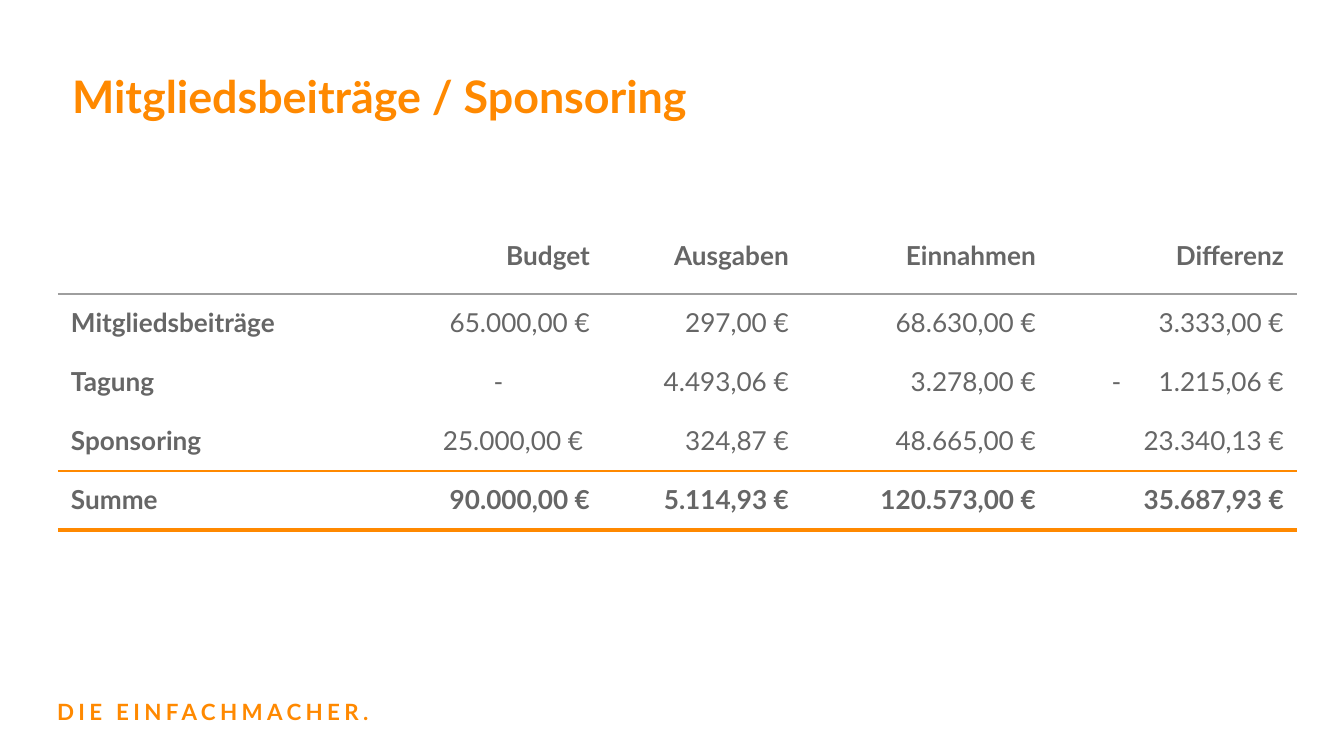
"""Build the slide on membership fees and sponsoring."""
from lxml.etree import SubElement
from pptx import Presentation
from pptx.dml.color import RGBColor
from pptx.enum.text import MSO_ANCHOR as Anchor, PP_ALIGN as Align
from pptx.oxml.ns import qn
from pptx.util import Emu, Pt

COLORS = {"orange": "FF8900", "text": "666666", "rule": "9E9E9E"}
FONT = "Lato"
SLIDE = (1344, 756)
PADDING = 13

TITLE = ("Mitgliedsbeiträge / Sponsoring", (59, 48, 1236, 86))
CLAIM = ("DIE EINFACHMACHER.", (44, 685, 417, 55))

ROWS = [
    ("", "Budget", "Ausgaben", "Einnahmen", "Differenz"),
    ("Mitgliedsbeiträge", "65.000,00 €", "297,00 €", "68.630,00 €", "3.333,00 €"),
    ("Tagung", "-", "4.493,06 €", "3.278,00 €", "1.215,06 €"),
    ("Sponsoring", "25.000,00 € ", "324,87 €", "48.665,00 €", "23.340,13 €"),
    ("Summe", "90.000,00 €", "5.114,93 €", "120.573,00 €", "35.687,93 €"),
]
TABLE_AT = (58, 227)
COLUMN_WIDTHS = [336, 209, 199, 247, 248]
ROW_HEIGHTS = [67, 59, 59, 59, 59]
RULES = {1: ("rule", 0.75), 4: ("orange", 0.75), 5: ("orange", 2.25)}
CENTERED_CELL = (2, 1)
DASHED_CELL = (2, 4)


def px(length):
    return Emu(round(length * 914400 / 134.4))


def write(frame, text, size=14, color="text", bold=False, align=Align.LEFT,
          line_spacing=None, tracking=None, dash=False):
    para = frame.paragraphs[0]
    if dash:
        props = para._p.get_or_add_pPr()
        props.set("marL", str(px(67)))
        props.set("indent", str(px(-47)))
        tint = SubElement(props, qn("a:buClr"))
        SubElement(tint, qn("a:srgbClr"), val=COLORS[color])
        SubElement(props, qn("a:buFont"), typeface=FONT)
        SubElement(props, qn("a:buChar"), char="-")
    para.alignment = align
    if line_spacing:
        para.line_spacing = line_spacing
    span = para.add_run()
    span.text = text
    span.font.name = FONT
    span.font.size = Pt(size)
    span.font.bold = bold
    span.font.color.rgb = RGBColor.from_string(COLORS[color])
    if tracking:
        span.font._element.set("spc", str(round(tracking * 100)))


def pad(item):
    for side in ("left", "top", "right", "bottom"):
        setattr(item, f"margin_{side}", px(PADDING))


def add_text(slide, text, place, **style):
    frame = slide.shapes.add_textbox(*map(px, place)).text_frame
    frame.word_wrap = True
    pad(frame)
    write(frame, text, **style)


def set_borders(cell, top, bottom):
    props = cell._tc.get_or_add_tcPr()
    edges = {"a:lnL": None, "a:lnR": None, "a:lnT": top, "a:lnB": bottom}
    for position, (tag, rule) in enumerate(edges.items()):
        line = SubElement(props, qn(tag))
        if rule:
            color, width = rule
            line.set("w", str(Pt(width)))
            fill = SubElement(line, qn("a:solidFill"))
            SubElement(fill, qn("a:srgbClr"), val=COLORS[color])
        else:
            SubElement(line, qn("a:noFill"))
        props.insert(position, line)


def add_budget_table(slide):
    size = (sum(COLUMN_WIDTHS), sum(ROW_HEIGHTS))
    table = slide.shapes.add_table(
        len(ROWS), len(COLUMN_WIDTHS), *map(px, TABLE_AT + size)).table
    table.first_row = False
    table.horz_banding = False
    for column, width in zip(table.columns, COLUMN_WIDTHS):
        column.width = px(width)
    for r, (values, height) in enumerate(zip(ROWS, ROW_HEIGHTS)):
        table.rows[r].height = px(height)
        for c, text in enumerate(values):
            cell = table.cell(r, c)
            cell.fill.background()
            cell.vertical_anchor = Anchor.TOP
            pad(cell)
            set_borders(cell, RULES.get(r), RULES.get(r + 1))
            align = Align.LEFT if c == 0 else Align.RIGHT
            if (r, c) == CENTERED_CELL:
                align = Align.CENTER
            write(cell.text_frame, text, align=align,
                  bold=c == 0 or r in (0, len(ROWS) - 1),
                  dash=(r, c) == DASHED_CELL)


def main():
    deck = Presentation()
    deck.slide_width, deck.slide_height = map(px, SLIDE)
    slide = deck.slides.add_slide(deck.slide_layouts[6])
    add_text(slide, *CLAIM, size=12, color="orange", bold=True, tracking=2.32)
    add_text(slide, *TITLE, size=24, color="orange", bold=True, line_spacing=1.15)
    add_budget_table(slide)
    deck.save("out.pptx")


if __name__ == "__main__":
    main()
